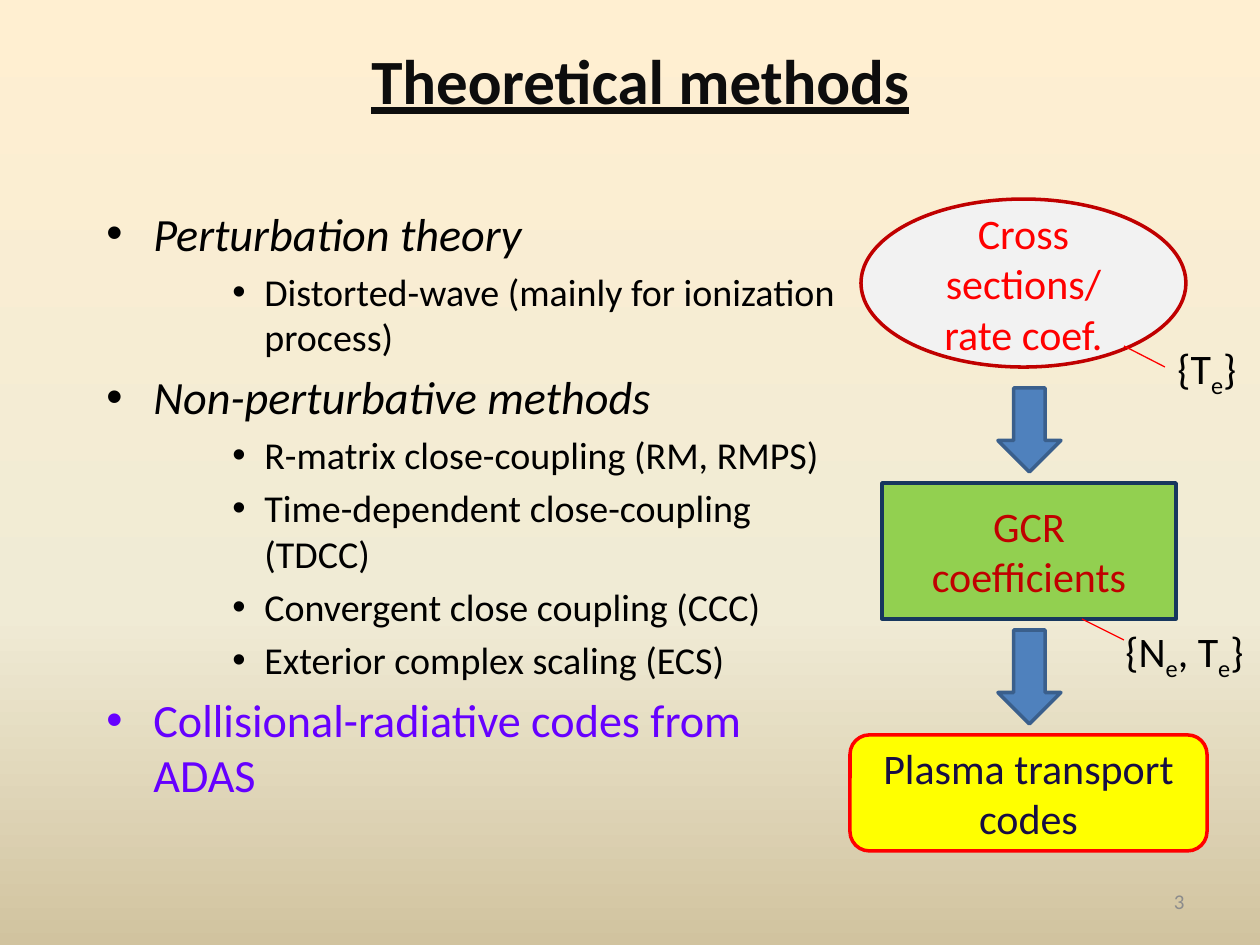
from lxml.etree import SubElement
from pptx import Presentation
from pptx.dml.color import RGBColor
from pptx.enum.shapes import MSO_CONNECTOR as Connector, MSO_SHAPE as Shape
from pptx.enum.text import MSO_ANCHOR as Anchor, PP_ALIGN as Align
from pptx.oxml import parse_xml
from pptx.oxml.ns import nsdecls, qn
from pptx.util import Pt

PX = 914400 // 126
FONT = "Calibri"
BLACK, RED = "000000", "FF0000"

BACKGROUND = [(0, "FFEFD1"), (65, "F0EBD5"), (100, "D1C39F")]
TITLE = "Theoretical methods"
PAGE_NUMBER = "3"

# text, level, italic, colour
METHODS = [
    ("Perturbation theory", 0, True, BLACK),
    ("Distorted-wave (mainly for ionization process)", 2, False, BLACK),
    ("Non-perturbative methods", 0, True, BLACK),
    ("R-matrix close-coupling (RM, RMPS)", 2, False, BLACK),
    ("Time-dependent close-coupling (TDCC)", 2, False, BLACK),
    ("Convergent close coupling (CCC)", 2, False, BLACK),
    ("Exterior complex scaling (ECS)", 2, False, BLACK),
    ("Collisional-radiative codes from ADAS", 0, False, "6600FF"),
]
# level: font size in points, left margin and hanging indent in px
LEVELS = {0: (26.4, 47, 47), 2: (21.7, 158, 32)}

# shape, box, fill, line, text, text colour
FLOW = [
    (Shape.OVAL, (861, 199, 325, 168), "F2F2F2", "C00000",
     "Cross sections/ rate coef.", RED),
    (Shape.RECTANGLE, (882, 483, 294, 136), "92D050", "17375E",
     "GCR coefficients", "C00000"),
    (Shape.DOWN_ARROW, (998, 388, 63, 84), "4F81BD", "3A5F8C", "", BLACK),
    (Shape.DOWN_ARROW, (998, 630, 63, 94), "4F81BD", "3A5F8C", "", BLACK),
    (Shape.ROUNDED_RECTANGLE, (850, 735, 357, 116), "FFFF00", RED,
     "Plasma transport codes", "170D43"),
]
# (text, is subscript) parts, box, leader line ends
PARAMETERS = [
    ([("{T", False), ("e", True), ("}", False)],
     (1165, 336, 95, 63), (1124, 346, 1165, 367)),
    ([("{N", False), ("e", True), (", T", False), ("e", True), ("}", False)],
     (1113, 619, 147, 97), (1082, 619, 1124, 640)),
]


def px(values):
    return [value * PX for value in values]


def rgb(color):
    return RGBColor.from_string(color)


def style(run, size, color, **font_options):
    font = run.font
    font.name, font.size, font.color.rgb = FONT, Pt(size), rgb(color)
    for option, value in font_options.items():
        setattr(font, option, value)


def add_box(slide, box, anchor=Anchor.TOP):
    frame = slide.shapes.add_textbox(*px(box)).text_frame
    frame.word_wrap = True
    frame.vertical_anchor = anchor
    return frame


def add_line_of_text(slide, box, text, align, size, color, **font_options):
    paragraph = add_box(slide, box, Anchor.MIDDLE).paragraphs[0]
    paragraph.text = text
    paragraph.alignment = align
    style(paragraph.runs[0], size, color, **font_options)


def paint_background(slide):
    """Fill the slide with a vertical gradient of any number of stops."""
    fill = slide.background.fill
    fill.gradient()
    fill.gradient_angle = 270
    stops = "".join(
        f'<a:gs pos="{percent * 1000}"><a:srgbClr val="{color}"/></a:gs>'
        for percent, color in BACKGROUND)
    stop_list = parse_xml(f'<a:gsLst {nsdecls("a")}>{stops}</a:gsLst>')
    old_list = next(slide.background._cSld.iter(qn("a:gsLst")))
    old_list.getparent().replace(old_list, stop_list)


def add_methods(slide):
    frame = add_box(slide, (94, 199, 756, 683))
    for index, (text, level, italic, color) in enumerate(METHODS):
        paragraph = frame.add_paragraph() if index else frame.paragraphs[0]
        size, margin, hanging = LEVELS[level]
        paragraph.text = text
        paragraph.level = level
        paragraph.space_before = Pt(round(size * 0.2, 1))
        style(paragraph.runs[0], size, color, italic=italic)
        properties = paragraph._p.get_or_add_pPr()
        properties.set("marL", str(margin * PX))
        properties.set("indent", str(-hanging * PX))
        SubElement(properties, qn("a:buFont")).set("typeface", "Arial")
        SubElement(properties, qn("a:buChar")).set("char", "•")


def add_flow_step(slide, kind, box, fill, line, text, color):
    step = slide.shapes.add_shape(kind, *px(box))
    step.shadow.inherit = False
    step.fill.solid()
    step.fill.fore_color.rgb = rgb(fill)
    step.line.color.rgb = rgb(line)
    step.line.width = Pt(2)
    if text:
        frame = step.text_frame
        frame.text = text
        frame.word_wrap = True
        frame.vertical_anchor = Anchor.MIDDLE
        frame.paragraphs[0].alignment = Align.CENTER
        style(frame.paragraphs[0].runs[0], 24, color)


def add_parameter(slide, parts, box, ends):
    paragraph = add_box(slide, box).paragraphs[0]
    for text, is_subscript in parts:
        run = paragraph.add_run()
        run.text = text
        style(run, 24, BLACK)
        if is_subscript:
            run.font._element.set("baseline", "-25000")
    leader = slide.shapes.add_connector(Connector.STRAIGHT, *px(ends))
    leader.line.color.rgb = rgb(RED)
    leader.line.width = Pt(0.75)
    SubElement(leader._element.spPr, qn("a:effectLst"))


def main():
    deck = Presentation()
    deck.slide_width, deck.slide_height = px((1260, 945))
    slide = deck.slides.add_slide(deck.slide_layouts[6])
    paint_background(slide)
    add_line_of_text(slide, (21, 0, 1239, 158), TITLE, Align.CENTER,
                     36, "0D0D0D", bold=True, underline=True)
    add_methods(slide)
    for step in FLOW:
        add_flow_step(slide, *step)
    for parameter in PARAMETERS:
        add_parameter(slide, *parameter)
    add_line_of_text(slide, (903, 876, 294, 50), PAGE_NUMBER, Align.RIGHT,
                     12, "8C8C8C")
    deck.save("out.pptx")


if __name__ == "__main__":
    main()
